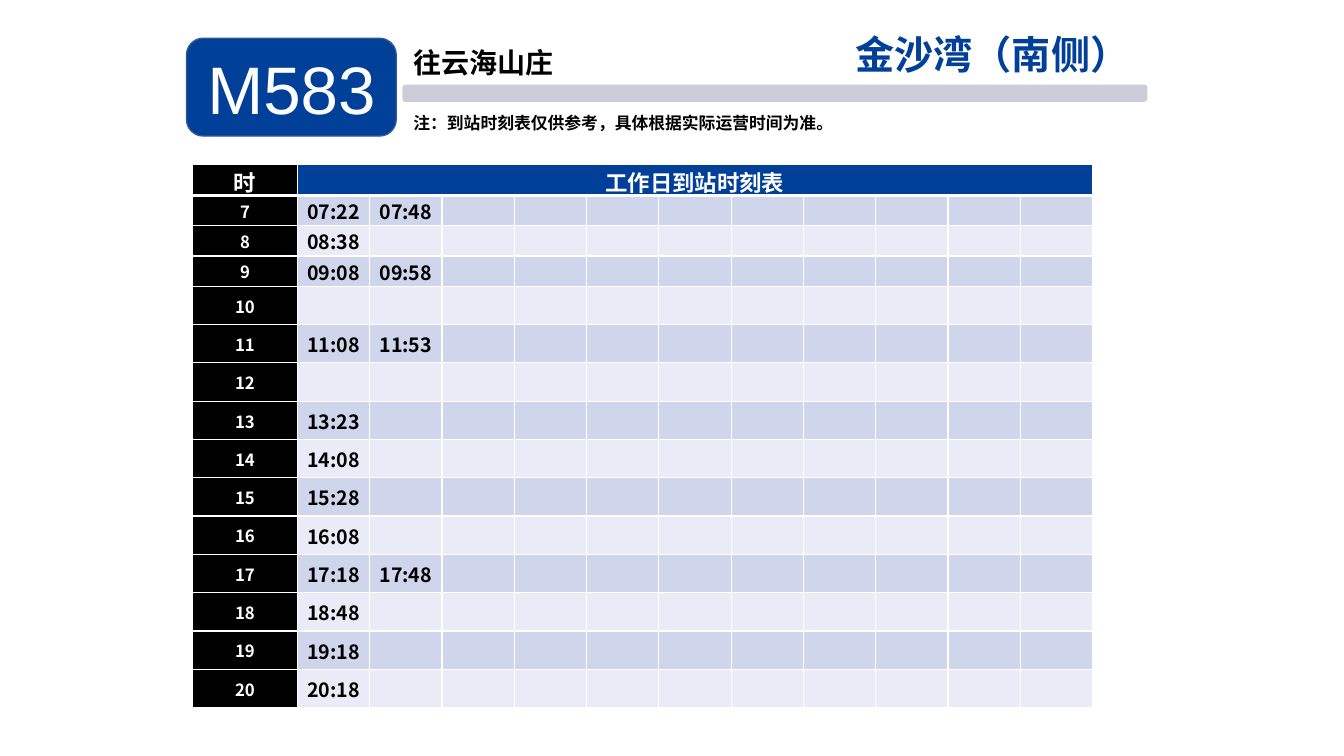
from dataclasses import dataclass

from lxml.etree import SubElement
from pptx import Presentation
from pptx.dml.color import RGBColor
from pptx.enum.shapes import MSO_SHAPE as Preset
from pptx.enum.text import MSO_ANCHOR as Anchor, PP_ALIGN as Align
from pptx.oxml.ns import qn
from pptx.util import Pt

PX = 9144  # 100 px to the inch
BLUE, BLACK, WHITE = "014099", "000000", "FFFFFF"
BANDS = ("CFD6EC", "E9EBF6")
NOTO = "Noto Sans CJK SC"
SLOTS = 11
TIMES = {
    7: ["07:22", "07:48"], 8: ["08:38"], 9: ["09:08", "09:58"], 10: [],
    11: ["11:08", "11:53"], 12: [], 13: ["13:23"], 14: ["14:08"],
    15: ["15:28"], 16: ["16:08"], 17: ["17:18", "17:48"], 18: ["18:48"],
    19: ["19:18"], 20: ["20:18"],
}


@dataclass
class Style:
    size: int
    color: str
    bold: bool = True
    face: str = NOTO
    align: Align = Align.LEFT
    before: float = 0


@dataclass
class Label:
    text: str
    box: tuple[int, int, int, int]
    inset: tuple[int, int, int, int]
    style: Style


@dataclass
class Panel:
    box: tuple[int, int, int, int]
    fill: str
    round: float
    line: str = ""


LABELS = [
    Label("往云海山庄", (409, 44, 343, 35), (1, 1, 0, 0),
          Style(20, BLACK, before=1.1)),
    Label("注：到站时刻表仅供参考，具体根据实际运营时间为准。",
          (409, 111, 419, 22), (1, 1, 0, 0), Style(12, BLACK, before=1)),
    Label("金沙湾（南侧）", (775, 25, 355, 55), (10, 5, 10, 5),
          Style(28, BLUE, face="Arial", align=Align.RIGHT)),
]


def rgb(code: str) -> RGBColor:
    return RGBColor.from_string(code)


def emu(box: tuple) -> list[int]:
    return [n * PX for n in box]


def apply(item, values: dict) -> None:
    for name, value in values.items():
        setattr(item, name, value)


def pad(item, inset: tuple) -> None:
    sides = ("left", "top", "right", "bottom")
    apply(item, {f"margin_{s}": n for s, n in zip(sides, emu(inset))})


def write(frame, text: str, style: Style) -> None:
    par = frame.paragraphs[0]
    apply(par, {"alignment": style.align, "space_before": Pt(style.before)})
    run = par.add_run()
    run.text = text
    apply(run.font, {"size": Pt(style.size), "bold": style.bold,
                     "name": style.face})
    run.font.color.rgb = rgb(style.color)
    SubElement(run.font._element, qn("a:ea"), typeface=NOTO)


def add_panel(slide, panel: Panel):
    shape = slide.shapes.add_shape(Preset.ROUNDED_RECTANGLE, *emu(panel.box))
    shape.adjustments[0] = panel.round
    shape.shadow.inherit = False
    shape.fill.solid()
    shape.fill.fore_color.rgb = rgb(panel.fill)
    if panel.line:
        shape.line.color.rgb = rgb(panel.line)
        shape.line.width = Pt(1)
    else:
        shape.line.fill.background()
    return shape


def add_label(slide, label: Label) -> None:
    frame = slide.shapes.add_textbox(*emu(label.box)).text_frame
    frame.word_wrap = True
    pad(frame, label.inset)
    write(frame, label.text, label.style)


def edge(cell, widths: dict[str, int]) -> None:
    props = cell._tc.get_or_add_tcPr()
    for side, width in widths.items():
        line = SubElement(props, qn(f"a:ln{side}"), w=str(Pt(width)))
        fill = SubElement(line, qn("a:solidFill"))
        SubElement(fill, qn("a:srgbClr"), val=WHITE)


def set_cell(cell, text: str, fill: str, size: int, color: str,
             top: int = 1, base: int = 1) -> None:
    edge(cell, {"L": 1, "R": 1, "T": top, "B": base})
    cell.fill.solid()
    cell.fill.fore_color.rgb = rgb(fill)
    pad(cell, (1, 1, 1, 0))
    cell.vertical_anchor = Anchor.MIDDLE
    if text:
        write(cell.text_frame, text, Style(size, color, align=Align.CENTER))
    else:
        # Keep empty cells from stretching their row
        par = cell.text_frame.paragraphs[0]
        SubElement(par._p, qn("a:endParaRPr"), sz="1000")


def add_times(slide) -> None:
    table = slide.shapes.add_table(len(TIMES) + 1, SLOTS + 1,
                                   *emu((191, 163, 893, 539))).table
    apply(table, {"first_row": False, "horz_banding": False})
    for col, width in zip(table.columns, [104] + [717 / 10] * SLOTS):
        col.width = round(width * PX)
    for row, height in zip(table.rows, [31] + [30] * 3 + [38] * 11):
        row.height = height * PX

    # Heading row
    heads = ["时", "工作日到站时刻表"] + [""] * (SLOTS - 1)
    for col, text in enumerate(heads):
        set_cell(table.cell(0, col), text, BLUE if col else BLACK, 16, WHITE,
                 base=3)
    table.cell(0, 1).merge(table.cell(0, SLOTS))

    # One row for each hour
    for row, (hour, times) in enumerate(TIMES.items(), 1):
        top = 3 if row == 1 else 1
        set_cell(table.cell(row, 0), str(hour), BLACK, 12, WHITE, top)
        for col in range(1, SLOTS + 1):
            text = times[col - 1] if col <= len(times) else ""
            set_cell(table.cell(row, col), text, BANDS[(row - 1) % 2], 14,
                     BLACK, top)


def main() -> None:
    deck = Presentation()
    apply(deck, {"slide_width": 1333 * PX, "slide_height": 750 * PX})
    slide = deck.slides.add_slide(deck.slide_layouts[6])

    # Header bar and captions
    add_panel(slide, Panel((399, 84, 739, 17), "CDCDDA", 0.18))
    for label in LABELS:
        add_label(slide, label)

    # Timetable
    add_times(slide)

    # Route badge
    badge = add_panel(slide, Panel((185, 38, 208, 97), BLUE, 0.17, "355696"))
    badge.text_frame.vertical_anchor = Anchor.MIDDLE
    write(badge.text_frame, "M583",
          Style(48, WHITE, False, "Arial", Align.CENTER))

    deck.save("out.pptx")


if __name__ == "__main__":
    main()
